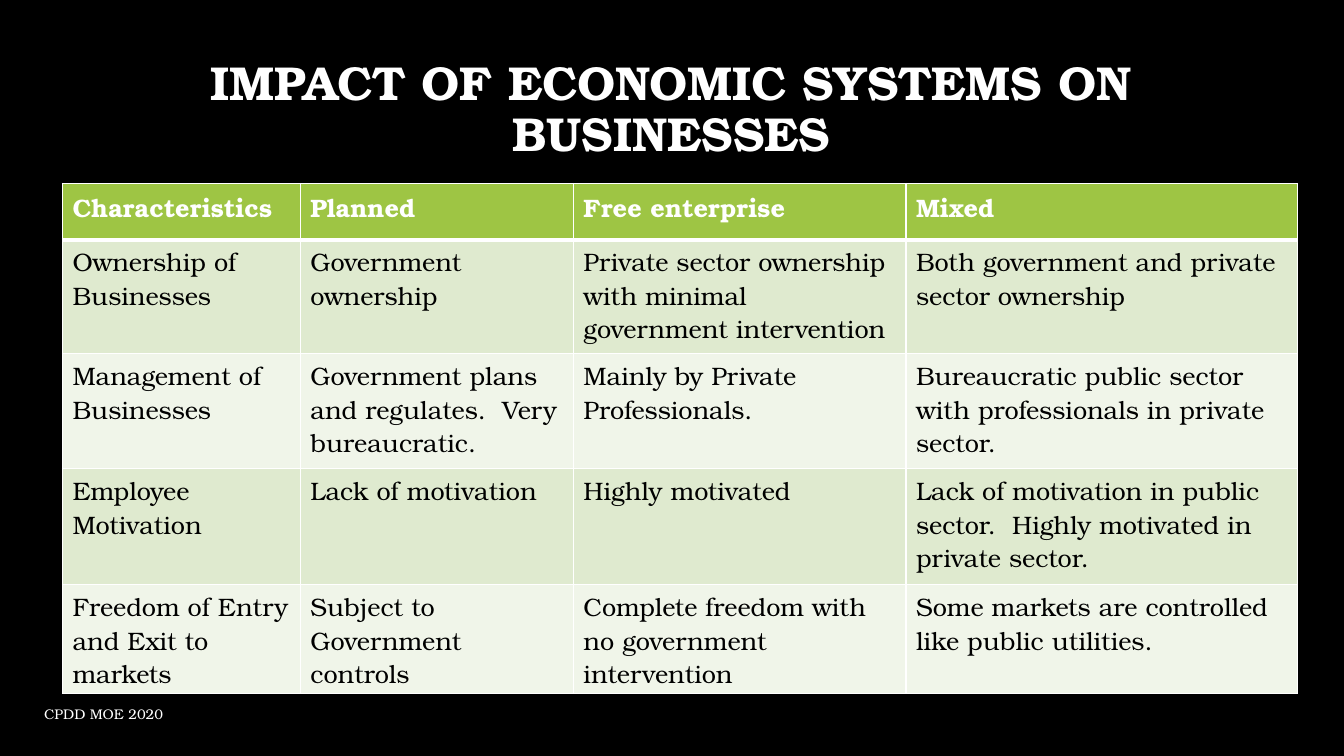
from lxml.etree import SubElement
from pptx import Presentation
from pptx.dml.color import RGBColor
from pptx.enum.text import MSO_ANCHOR as ANCHOR, PP_ALIGN as ALIGN
from pptx.oxml.ns import qn
from pptx.util import Pt

FONT = "TeX Gyre Bonum"
WHITE, BLACK, GREEN = "FFFFFF", "000000", "9EC544"
BANDS = ["DFEACF", "F0F5E9"]
COLUMN_WIDTHS = [170, 195, 237.6, 279.4]
ROW_HEIGHTS = [40.3, 81.4, 82, 83, 77.8]
SYSTEMS = [
    ["Characteristics", "Planned", "Free enterprise", "Mixed"],
    ["Ownership of Businesses", "Government ownership",
     "Private sector ownership with minimal government intervention",
     "Both government and private sector ownership"],
    ["Management of Businesses",
     "Government plans and regulates.  Very bureaucratic.",
     "Mainly by Private Professionals.",
     "Bureaucratic public sector with professionals in private sector."],
    ["Employee Motivation", "Lack of motivation", "Highly motivated",
     "Lack of motivation in public sector.  Highly motivated in private sector."],
    ["Freedom of Entry and Exit to markets", "Subject to Government controls",
     "Complete freedom with no government intervention",
     "Some markets are controlled like public utilities."],
]


def rgb(value):
    return RGBColor.from_string(value)


def style(p, size, color, bold=False):
    p.font.name = FONT
    p.font.size = Pt(size)
    p.font.bold = bold
    p.font.color.rgb = rgb(color)


def add_text(s, text, box, size, bold=False, align=ALIGN.LEFT, spacing=1.0):
    tf = s.shapes.add_textbox(*map(Pt, box)).text_frame
    tf.word_wrap = True
    tf.vertical_anchor = ANCHOR.MIDDLE
    p = tf.paragraphs[0]
    p.text = text
    p.alignment = align
    p.line_spacing = spacing
    style(p, size, WHITE, bold)


def add_borders(cell, bottom):
    tcPr = cell._tc.get_or_add_tcPr()
    widths = {"a:lnL": 1, "a:lnR": 1, "a:lnT": 1, "a:lnB": bottom}
    for i, (tag, width) in enumerate(widths.items()):
        ln = SubElement(tcPr, qn(tag), w=str(Pt(width)))
        tcPr.insert(i, ln)
        fill = SubElement(ln, qn("a:solidFill"))
        SubElement(fill, qn("a:srgbClr"), val=WHITE)


def fill_cell(cell, text, row):
    header = row == 0
    cell.text = text
    cell.fill.solid()
    cell.fill.fore_color.rgb = rgb(GREEN if header else BANDS[(row - 1) % 2])
    style(cell.text_frame.paragraphs[0], 18, WHITE if header else BLACK, header)
    add_borders(cell, 3 if header else 1)


def add_systems_table(s, left, top):
    table = s.shapes.add_table(
        len(SYSTEMS), len(COLUMN_WIDTHS), Pt(left), Pt(top),
        Pt(sum(COLUMN_WIDTHS)), Pt(sum(ROW_HEIGHTS))).table
    for column, width in zip(table.columns, COLUMN_WIDTHS):
        column.width = Pt(width)
    for r, (height, texts) in enumerate(zip(ROW_HEIGHTS, SYSTEMS)):
        table.rows[r].height = Pt(height)
        for c, text in enumerate(texts):
            fill_cell(table.cell(r, c), text, r)


def main():
    prs = Presentation()
    prs.slide_width, prs.slide_height = Pt(960), Pt(540)
    s = prs.slides.add_slide(prs.slide_layouts[6])
    s.background.fill.solid()
    s.background.fill.fore_color.rgb = rgb(BLACK)
    add_text(s, "IMPACT OF ECONOMIC SYSTEMS ON BUSINESSES",
             (72, 26.6, 815, 104.4), 34, True, ALIGN.CENTER, 0.9)
    add_systems_table(s, 44.6, 131)
    add_text(s, "CPDD MOE 2020", (24.5, 495.4, 525.6, 28.8), 10)
    prs.save("out.pptx")


if __name__ == "__main__":
    main()
